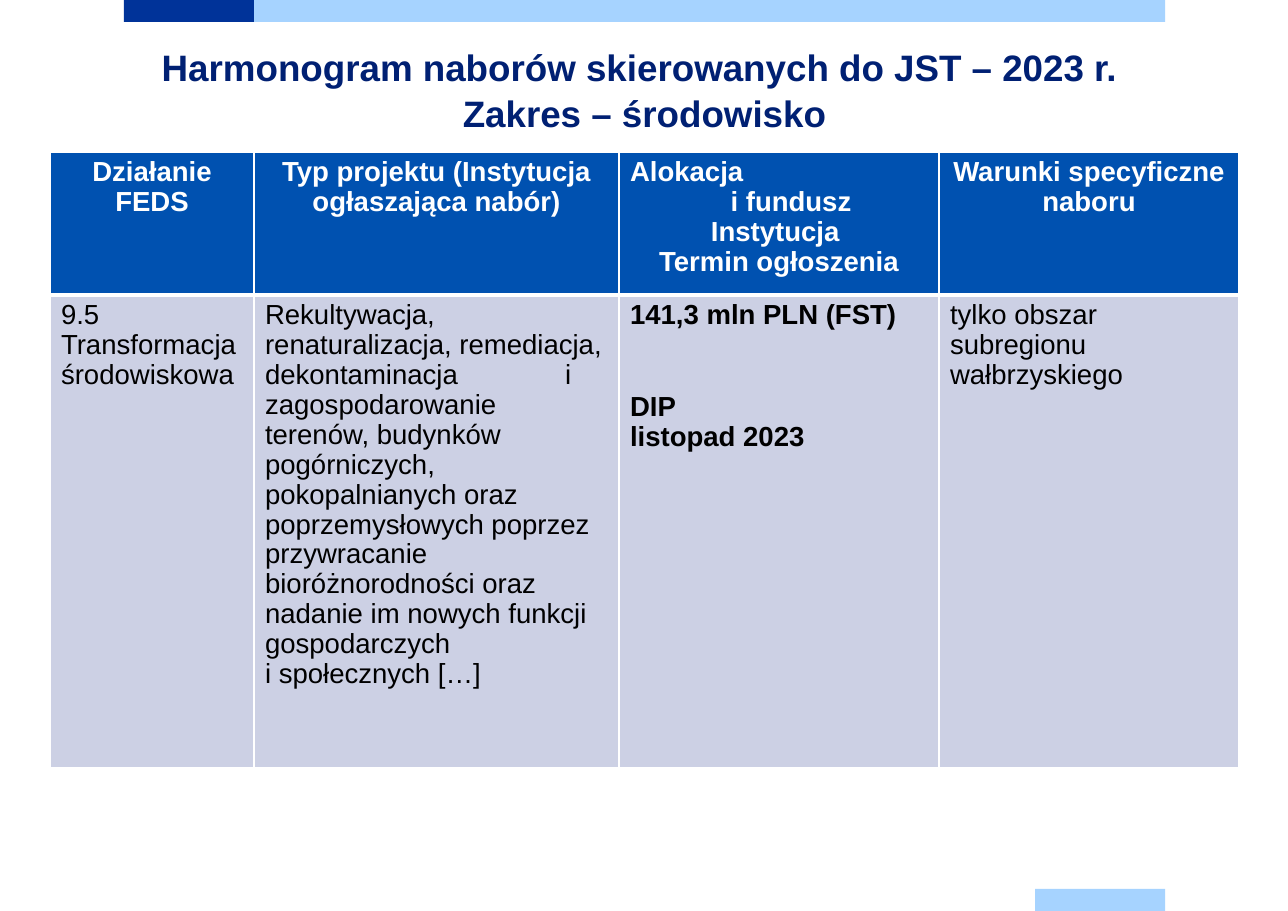
from dataclasses import dataclass
from typing import Any

from lxml.etree import SubElement
from pptx import Presentation
from pptx.dml.color import RGBColor
from pptx.enum.shapes import MSO_SHAPE
from pptx.enum.text import MSO_ANCHOR, MSO_AUTO_SIZE, PP_ALIGN
from pptx.oxml.ns import qn
from pptx.util import Emu, Pt

EMU_PER_PX = 8298
EMU_PER_PT = 12700

NAVY = RGBColor(0x00, 0x33, 0x99)
SKY = RGBColor(0xA6, 0xD3, 0xFF)
TITLE_BLUE = RGBColor(0x00, 0x20, 0x73)
HEADER_BLUE = RGBColor(0x00, 0x51, 0xB0)
BODY_LAVENDER = RGBColor(0xCC, 0xD0, 0xE4)
WHITE = RGBColor(0xFF, 0xFF, 0xFF)
BLACK = RGBColor(0x00, 0x00, 0x00)

TITLE_FONT = {"name": "Arial", "size": Pt(24), "bold": True}
HEADER_FONT = {"name": "Arial", "size": Pt(18), "bold": True}
BODY_FONT = {"name": "Arial", "size": Pt(18), "bold": False}
BOLD_BODY_FONT = {**BODY_FONT, "bold": True}


def px(length: int) -> Emu:
    return Emu(length * EMU_PER_PX)


@dataclass
class Bar:
    left: int
    top: int
    width: int
    color: RGBColor
    height: int = 22


@dataclass
class Line:
    text: str
    align: PP_ALIGN = PP_ALIGN.LEFT
    space_before: int = 0
    indent: int = 0
    tab_stop: int = 0


@dataclass
class CellContent:
    lines: list[Line]
    font: dict[str, Any]
    color: RGBColor
    fill: RGBColor
    bottom_border: int


def header(*lines: Line) -> CellContent:
    return CellContent(list(lines), HEADER_FONT, WHITE, HEADER_BLUE, 3)


def body(*lines: Line, font: dict[str, Any] = BODY_FONT) -> CellContent:
    return CellContent(list(lines), font, BLACK, BODY_LAVENDER, 1)


def centered(text: str, indent: int = 0) -> Line:
    return Line(text, PP_ALIGN.CENTER, indent=indent)


BARS = [
    Bar(124, 0, 130, NAVY),
    Bar(254, 0, 911, SKY),
    Bar(1035, 889, 130, SKY),
]

TITLE_LINES = [
    centered("Harmonogram naborów skierowanych do JST – 2023 r. "),
    centered("Zakres – środowisko"),
]

COLUMN_WIDTHS = [204, 365, 320, 300]
ROW_HEIGHTS = [143, 473]
ROWS = [
    [
        header(centered("Działanie FEDS")),
        header(centered("Typ projektu (Instytucja ogłaszająca nabór)")),
        header(
            Line("Alokacja"),
            centered("i fundusz", indent=24),
            centered("Instytucja "),
            centered("Termin ogłoszenia"),
        ),
        header(centered("Warunki specyficzne naboru")),
    ],
    [
        body(Line("9.5 Transformacja środowiskowa")),
        body(Line(
            "Rekultywacja, renaturalizacja, remediacja, dekontaminacja\ti "
            "zagospodarowanie terenów, budynków pogórniczych, pokopalnianych "
            "oraz poprzemysłowych poprzez przywracanie bioróżnorodności oraz "
            "nadanie im nowych funkcji gospodarczych \vi społecznych […]",
            tab_stop=300,
        )),
        body(
            Line("141,3 mln PLN (FST)"),
            Line("DIP", space_before=62),
            Line("listopad 2023"),
            font=BOLD_BODY_FONT,
        ),
        body(Line("tylko obszar subregionu wałbrzyskiego")),
    ],
]


def write_lines(text_frame, lines: list[Line], font: dict[str, Any],
                color: RGBColor, spacing: float) -> None:
    for index, line in enumerate(lines):
        paragraph = text_frame.paragraphs[0] if index == 0 else text_frame.add_paragraph()
        paragraph.text = line.text
        properties = paragraph._p.get_or_add_pPr()
        if line.indent:
            properties.set("marL", str(px(line.indent)))
        if line.tab_stop:
            tabs = SubElement(properties, qn("a:tabLst"))
            SubElement(tabs, qn("a:tab"), pos=str(px(line.tab_stop)), algn="l")
        layout = {
            "alignment": line.align,
            "line_spacing": spacing,
            "space_before": px(line.space_before),
            "space_after": Pt(0),
        }
        for name, value in layout.items():
            setattr(paragraph, name, value)
        for run in paragraph.runs:
            for name, value in font.items():
                setattr(run.font, name, value)
            run.font.color.rgb = color


def draw_bar(slide, bar: Bar) -> None:
    shape = slide.shapes.add_shape(
        MSO_SHAPE.RECTANGLE, px(bar.left), px(bar.top), px(bar.width), px(bar.height))
    shape.shadow.inherit = False
    shape.fill.solid()
    shape.fill.fore_color.rgb = bar.color
    shape.line.fill.background()


def draw_title(slide) -> None:
    title = slide.shapes.title
    place = {"left": px(124), "top": px(39), "width": px(1041), "height": px(100)}
    for name, value in place.items():
        setattr(title, name, value)
    frame = title.text_frame
    frame_format = {
        "word_wrap": True,
        "auto_size": MSO_AUTO_SIZE.NONE,
        "vertical_anchor": MSO_ANCHOR.MIDDLE,
    }
    for name, value in frame_format.items():
        setattr(frame, name, value)
    write_lines(frame, TITLE_LINES, TITLE_FONT, TITLE_BLUE, 1.05)


def set_borders(cell, bottom: int, top: int) -> None:
    properties = cell._tc.get_or_add_tcPr()
    widths = {"a:lnL": 1, "a:lnR": 1, "a:lnT": top, "a:lnB": bottom}
    for position, (tag, points) in enumerate(widths.items()):
        border = SubElement(properties, qn(tag), w=str(points * EMU_PER_PT))
        fill = SubElement(border, qn("a:solidFill"))
        SubElement(fill, qn("a:srgbClr"), val=str(WHITE))
        properties.insert(position, border)


def draw_table(slide) -> None:
    table = slide.shapes.add_table(
        len(ROWS), len(COLUMN_WIDTHS), px(50), px(152),
        px(sum(COLUMN_WIDTHS)), px(sum(ROW_HEIGHTS))).table
    table.horz_banding = False
    for column, width in zip(table.columns, COLUMN_WIDTHS):
        column.width = px(width)
    for row_index, (row, height) in enumerate(zip(table.rows, ROW_HEIGHTS)):
        row.height = px(height)
        top_border = ROWS[row_index - 1][0].bottom_border if row_index else 1
        for cell, content in zip(row.cells, ROWS[row_index]):
            cell.fill.solid()
            cell.fill.fore_color.rgb = content.fill
            set_borders(cell, content.bottom_border, top_border)
            write_lines(cell.text_frame, content.lines, content.font, content.color, 0.97)


def main() -> None:
    presentation = Presentation()
    presentation.slide_width = px(1288)
    presentation.slide_height = px(911)
    slide = presentation.slides.add_slide(presentation.slide_layouts[5])

    # Decorative bars
    for bar in BARS:
        draw_bar(slide, bar)

    # Heading and schedule
    draw_title(slide)
    draw_table(slide)

    presentation.save("out.pptx")


if __name__ == "__main__":
    main()
